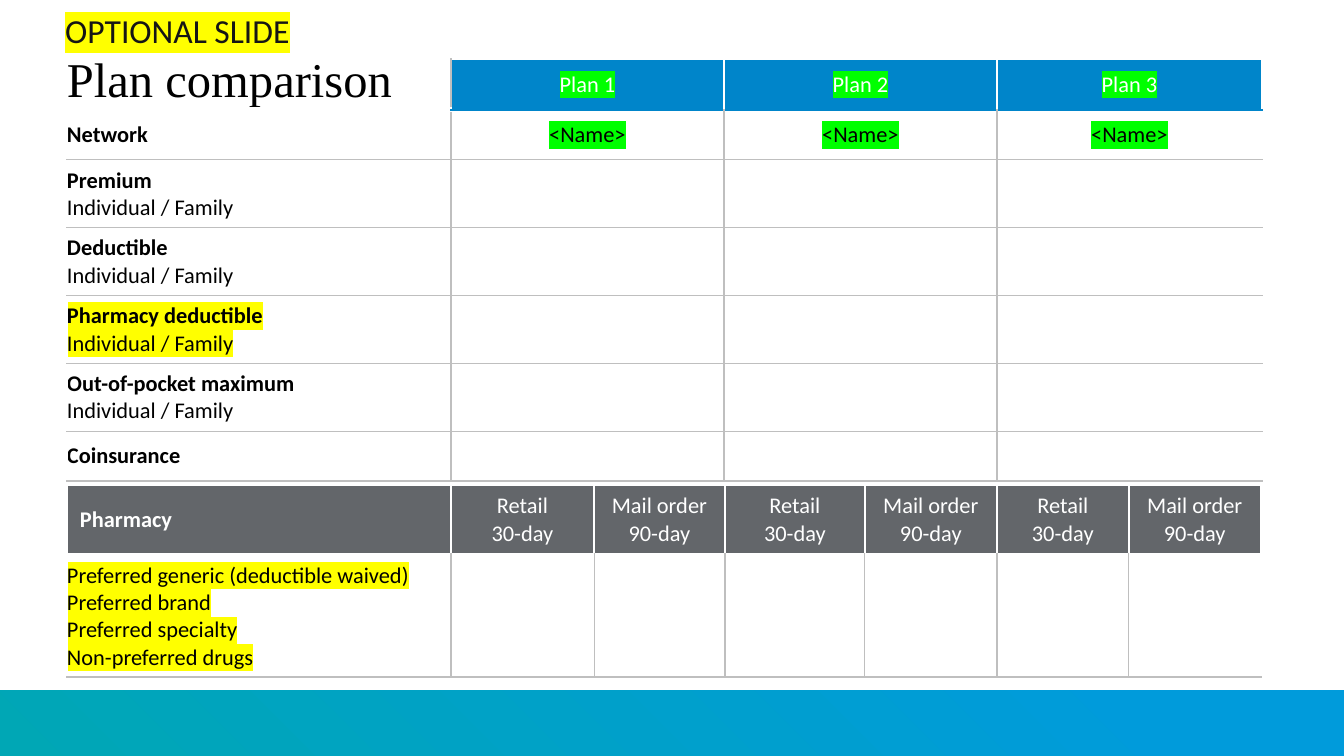
from lxml import etree
from pptx import Presentation
from pptx.dml.color import RGBColor
from pptx.enum.shapes import MSO_SHAPE
from pptx.enum.text import MSO_ANCHOR, MSO_AUTO_SIZE, PP_ALIGN
from pptx.oxml.ns import qn
from pptx.util import Emu, Pt

RECTANGLE = MSO_SHAPE.RECTANGLE
BOTTOM, MIDDLE = MSO_ANCHOR.BOTTOM, MSO_ANCHOR.MIDDLE
LEFT, CENTER = PP_ALIGN.LEFT, PP_ALIGN.CENTER
GROW = MSO_AUTO_SIZE.SHAPE_TO_FIT_TEXT

EMU_PER_PX = 914400 / 134.4
COLORS = {
    "white": "FFFFFF", "black": "000000", "ink": "151515", "grid": "BFBFBF",
    "plan": "0085CA", "pharmacy": "63666A", "yellow": "FFFF00",
    "green": "00FF00", "sky": "009BDB", "teal": "00A7B5",
}
THIN, EDGE, HIDDEN = ("grid", 0.5), ("grid", 1), ("white", 1)
THICK, ACCENT = ("white", 3), ("plan", 1)

PLANS = ["Plan 1", "Plan 2", "Plan 3"]
MEMBERS = "Individual / Family"
BENEFITS = [
    (["Network"], None),
    (["Premium", MEMBERS], None),
    (["Deductible", MEMBERS], None),
    (["Pharmacy deductible", MEMBERS], "yellow"),
    (["Out-of-pocket maximum", MEMBERS], None),
    (["Coinsurance"], None),
]
SUPPLIES = [["Retail", "30-day"], ["Mail order", "90-day"]] * len(PLANS)
DRUG_TIERS = ["Preferred generic (deductible waived)", "Preferred brand",
              "Preferred specialty", "Non-preferred drugs"]


def px(length):
    return Emu(round(length * EMU_PER_PX))


def rgb(name):
    return RGBColor.from_string(COLORS[name])


def write_line(paragraph, text, size, color, font="Calibri", bold=False, highlight=None):
    paragraph.font.size = Pt(size)
    paragraph.font.name = font
    paragraph.font.bold = bold
    paragraph.font.color.rgb = rgb(color)
    run = paragraph.add_run()
    run.text = text
    if highlight:
        mark = etree.SubElement(run._r.get_or_add_rPr(), qn("a:highlight"))
        etree.SubElement(mark, qn("a:srgbClr"), val=COLORS[highlight])


def set_borders(cell, left, right, top, bottom):
    properties = cell._tc.get_or_add_tcPr()
    for tag, (color, width) in zip(("lnL", "lnR", "lnT", "lnB"), (left, right, top, bottom)):
        line = etree.SubElement(properties, qn(f"a:{tag}"), w=str(Pt(width)))
        fill = etree.SubElement(line, qn("a:solidFill"))
        etree.SubElement(fill, qn("a:srgbClr"), val=COLORS[color])


def fill_cell(cell, borders, lines=(), fill=None, color="black", align=LEFT,
              inset=13, bold_first=False, highlight=None, spacing=None):
    set_borders(cell, *borders)
    if fill:
        cell.fill.solid()
        cell.fill.fore_color.rgb = rgb(fill)
    else:
        cell.fill.background()
    cell.vertical_anchor = MIDDLE
    cell.margin_left, cell.margin_right = px(inset), px(13)
    cell.margin_top = cell.margin_bottom = px(7)
    frame = cell.text_frame
    if not lines:
        etree.SubElement(frame.paragraphs[0]._p, qn("a:endParaRPr"), sz="1200")
    for index, text in enumerate(lines):
        paragraph = frame.add_paragraph() if index else frame.paragraphs[0]
        paragraph.alignment = align
        if spacing:
            paragraph.line_spacing = Pt(spacing)
        write_line(paragraph, text, 12, color, bold=bold_first and index == 0,
                   highlight=highlight)


def add_grid(slide, left, top, widths, heights):
    frame = slide.shapes.add_table(len(heights), len(widths), px(left), px(top),
                                   px(sum(widths)), px(sum(heights)))
    grid = frame.table
    grid.first_row = grid.horz_banding = False
    for column, width in zip(grid.columns, widths):
        column.width = px(width)
    for row, height in zip(grid.rows, heights):
        row.height = px(height)
    return grid


def add_footer(slide, left, top, width, height):
    band = slide.shapes.add_shape(RECTANGLE, px(left), px(top), px(width), px(height))
    band.rotation = 180
    band.shadow.inherit = False
    band.line.fill.background()
    band.fill.gradient()
    band.fill.gradient_angle = 45
    for stop, color, position in zip(band.fill.gradient_stops, ("sky", "teal"), (0.15, 1)):
        stop.color.rgb = rgb(color)
        stop.position = position


def add_heading(slide, left, top, width, height):
    title = slide.shapes.add_textbox(px(left), px(top), px(width), px(height)).text_frame
    title.word_wrap = True
    title.vertical_anchor = BOTTOM
    title.margin_left = 0
    write_line(title.paragraphs[0], "Plan comparison", 26, "black", "Times New Roman")

    notice = slide.shapes.add_textbox(px(left - 15), px(top + 3), px(253), px(54)).text_frame
    notice.word_wrap = True
    notice.auto_size = GROW
    notice.vertical_anchor = BOTTOM
    write_line(notice.paragraphs[0], "OPTIONAL SLIDE", 18, "ink", highlight="yellow")


def add_plan_table(slide, left, top):
    grid = add_grid(slide, left, top, [384, 273, 273, 265], [51, 50, 66, 66, 66, 66, 50])
    fill_cell(grid.cell(0, 0), (HIDDEN, EDGE, HIDDEN, THICK))
    for column, plan in enumerate(PLANS, 1):
        start = EDGE if column == 1 else HIDDEN
        fill_cell(grid.cell(0, column), (start, HIDDEN, HIDDEN, ACCENT), [plan],
                  fill="plan", color="white", align=CENTER, highlight="green")
    for row, (labels, highlight) in enumerate(BENEFITS, 1):
        bottom = EDGE if row == len(BENEFITS) else THIN
        fill_cell(grid.cell(row, 0), (HIDDEN, EDGE, HIDDEN if row == 1 else THIN, bottom),
                  labels, inset=0, bold_first=True, highlight=highlight)
        for column in range(1, len(PLANS) + 1):
            end = HIDDEN if column == len(PLANS) else EDGE
            fill_cell(grid.cell(row, column), (EDGE, end, ACCENT if row == 1 else THIN, bottom),
                      ["<Name>"] if row == 1 else (), align=CENTER, highlight="green")


def add_pharmacy_table(slide, left, top):
    grid = add_grid(slide, left, top, [384, 143, 131, 140, 132, 132, 132], [65, 122])
    header_borders = (HIDDEN, HIDDEN, HIDDEN, THICK)
    fill_cell(grid.cell(0, 0), header_borders, ["Pharmacy"], fill="pharmacy",
              color="white", bold_first=True)
    fill_cell(grid.cell(1, 0), (HIDDEN, EDGE, THICK, EDGE), DRUG_TIERS,
              inset=0, highlight="yellow")
    for column, supply in enumerate(SUPPLIES, 1):
        fill_cell(grid.cell(0, column), header_borders, supply, fill="pharmacy",
                  color="white", align=CENTER, spacing=15)
        start, end = (EDGE, THIN) if column % 2 else (THIN, EDGE)
        if column == len(SUPPLIES):
            end = HIDDEN
        fill_cell(grid.cell(1, column), (start, end, THICK, EDGE))


def main():
    deck = Presentation()
    deck.slide_width, deck.slide_height = px(1344), px(756)
    slide = deck.slides.add_slide(deck.slide_layouts[6])
    add_footer(slide, 0, 690, 1344, 66)
    add_heading(slide, 67, 0, 1249, 114)
    add_plan_table(slide, 67, 59)
    add_pharmacy_table(slide, 67, 485)
    deck.save("out.pptx")


if __name__ == "__main__":
    main()
